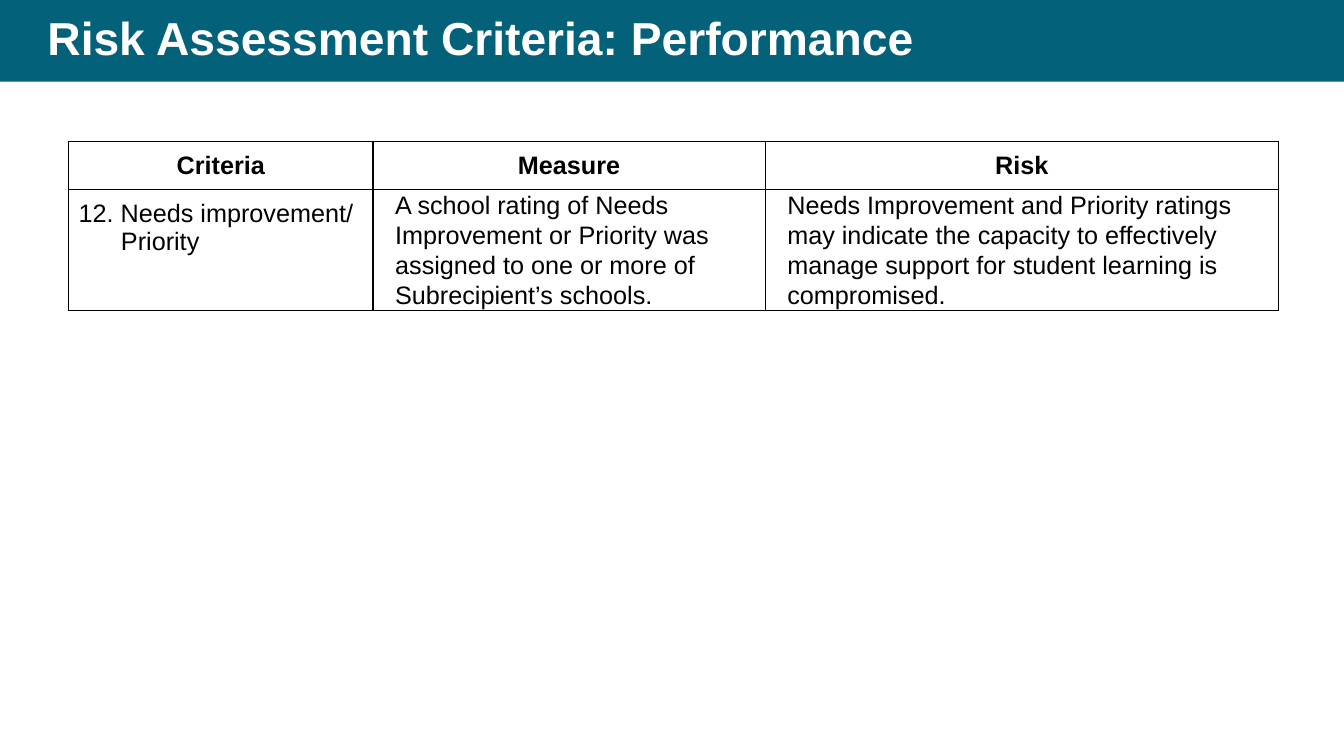
"""Build the slide on risk assessment criteria for performance."""
from dataclasses import dataclass

from lxml.etree import SubElement
from pptx import Presentation
from pptx.dml.color import RGBColor
from pptx.enum.shapes import MSO_SHAPE
from pptx.enum.text import MSO_ANCHOR, MSO_AUTO_SIZE, PP_ALIGN
from pptx.oxml.ns import qn
from pptx.slide import Slide
from pptx.table import _Cell
from pptx.util import Emu, Pt

COLORS = {"banner": "03617A", "title": "FFFFFF", "ink": "000000"}
FONT = "Arial"
SLIDE_WIDTH, SLIDE_HEIGHT, BANNER_HEIGHT = 1333, 750, 81
COLUMN_WIDTHS = (302, 389, 509)
ROW_HEIGHTS = (48, 120)


@dataclass(frozen=True)
class CellStyle:
    """Margins, alignment and weight shared by cells of one kind."""

    side_margin: int
    end_margin: int
    alignment: PP_ALIGN = PP_ALIGN.LEFT
    bold: bool = False
    line_spacing: float = 1.0


@dataclass(frozen=True)
class Line:
    """One paragraph and its left indent."""

    text: str
    indent: int = 0


@dataclass(frozen=True)
class CellContent:
    """The paragraphs of a cell and their style."""

    lines: tuple[Line, ...]
    style: CellStyle


HEADING = CellStyle(10, 10, PP_ALIGN.CENTER, bold=True)
CRITERION = CellStyle(10, 10)
DETAIL = CellStyle(7, 0, line_spacing=1.07)

ROWS = (
    tuple(CellContent((Line(text),), HEADING) for text in ("Criteria", "Measure", "Risk")),
    (
        CellContent((Line("12. Needs improvement/"), Line("Priority", 42)), CRITERION),
        CellContent((Line("A school rating of Needs Improvement or Priority was assigned "
                          "to one or more of Subrecipient’s schools.", 15),), DETAIL),
        CellContent((Line("Needs Improvement and Priority ratings may indicate the capacity to "
                          "effectively manage support for student learning is compromised.", 15),), DETAIL),
    ),
)


def px(length: int) -> Emu:
    """Turn px, at 100 to the inch, into EMU."""
    return Emu(length * 9144)


def color(name: str) -> RGBColor:
    """Look up a named colour."""
    return RGBColor.from_string(COLORS[name])


def add_title(slide: Slide, text: str) -> None:
    """Place the title on its banner."""
    title = slide.shapes.title
    banner = slide.shapes.add_shape(MSO_SHAPE.RECTANGLE, 0, 0, px(SLIDE_WIDTH), px(BANNER_HEIGHT))
    banner.shadow.inherit = False
    banner.fill.solid()
    banner.fill.fore_color.rgb = color("banner")
    banner.line.fill.background()
    title.element.addprevious(banner.element)

    title.left, title.top, title.width, title.height = px(37), 0, px(1232), px(BANNER_HEIGHT)
    frame = title.text_frame
    frame.text = text
    frame.word_wrap = True
    frame.auto_size = MSO_AUTO_SIZE.NONE
    frame.vertical_anchor = MSO_ANCHOR.MIDDLE
    paragraph = frame.paragraphs[0]
    paragraph.alignment = PP_ALIGN.LEFT
    paragraph.line_spacing = 0.9
    font = paragraph.font
    font.name, font.size, font.bold = FONT, Pt(33), True
    font.color.rgb = color("title")


def add_borders(cell: _Cell) -> None:
    """Draw a thin line on each side of a cell."""
    properties = cell._tc.get_or_add_tcPr()
    for side in ("lnL", "lnR", "lnT", "lnB"):
        border = SubElement(properties, qn(f"a:{side}"), w=str(Pt(1)))
        fill = SubElement(border, qn("a:solidFill"))
        SubElement(fill, qn("a:srgbClr"), val=COLORS["ink"])


def fill_cell(cell: _Cell, content: CellContent) -> None:
    """Write and format the content of a cell."""
    style = content.style
    add_borders(cell)
    cell.fill.background()
    cell.margin_left = cell.margin_right = px(style.side_margin)
    cell.margin_top = cell.margin_bottom = px(style.end_margin)
    cell.vertical_anchor = MSO_ANCHOR.TOP
    cell.text = "\n".join(line.text for line in content.lines)
    for paragraph, line in zip(cell.text_frame.paragraphs, content.lines):
        paragraph.alignment = style.alignment
        paragraph.line_spacing = style.line_spacing
        if line.indent:
            paragraph_properties = paragraph._p.get_or_add_pPr()
            paragraph_properties.set("marL", str(px(line.indent)))
            paragraph_properties.set("indent", "0")
        font = paragraph.font
        font.name, font.size, font.bold = FONT, Pt(18), style.bold
        font.color.rgb = color("ink")


def add_criteria_table(slide: Slide) -> None:
    """Add the table of criteria, measures and risks."""
    table = slide.shapes.add_table(
        len(ROW_HEIGHTS), len(COLUMN_WIDTHS),
        px(68), px(140), px(sum(COLUMN_WIDTHS)), px(sum(ROW_HEIGHTS)),
    ).table
    table.horz_banding = False
    for column, width in zip(table.columns, COLUMN_WIDTHS):
        column.width = px(width)
    for row, height, contents in zip(table.rows, ROW_HEIGHTS, ROWS):
        row.height = px(height)
        for cell, content in zip(row.cells, contents):
            fill_cell(cell, content)


def main() -> None:
    """Build and save the presentation."""
    presentation = Presentation()
    presentation.slide_width, presentation.slide_height = px(SLIDE_WIDTH), px(SLIDE_HEIGHT)
    slide = presentation.slides.add_slide(presentation.slide_layouts.get_by_name("Title Only"))
    add_title(slide, "Risk Assessment Criteria: Performance")
    add_criteria_table(slide)
    presentation.save("out.pptx")


if __name__ == "__main__":
    main()
